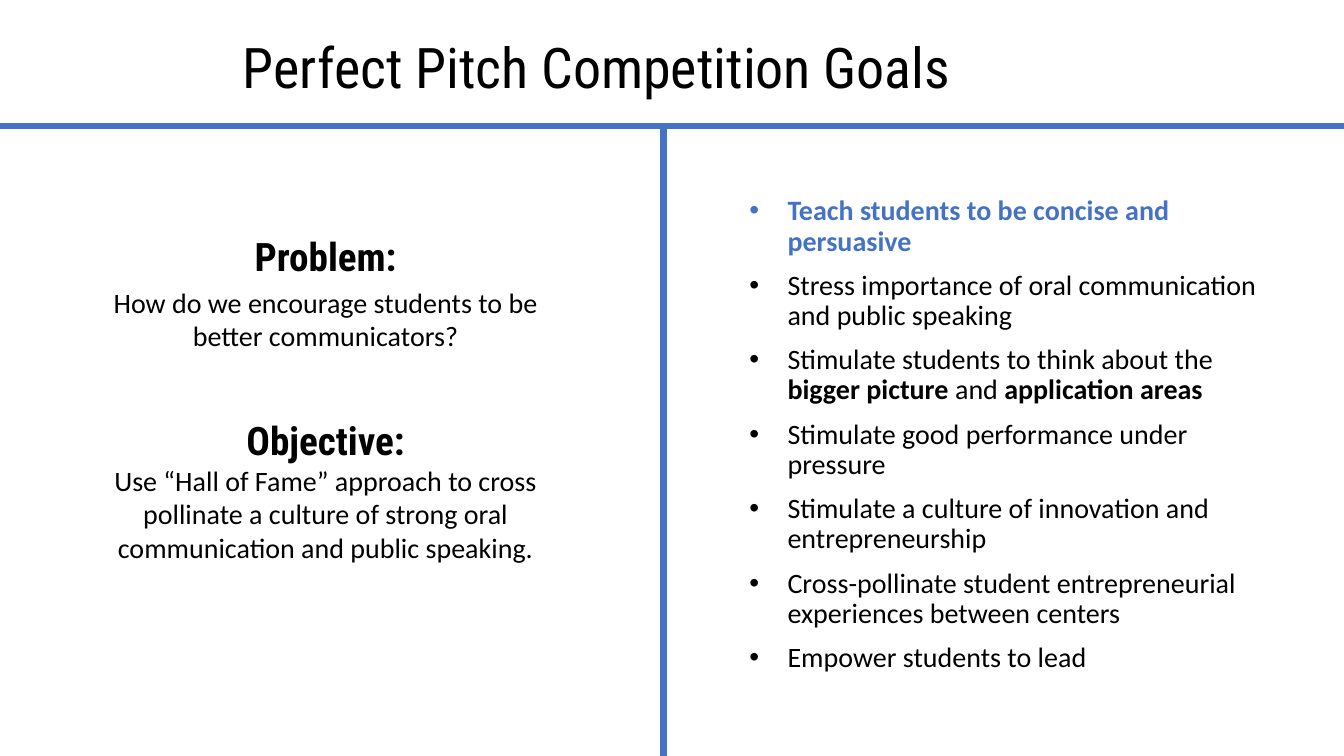
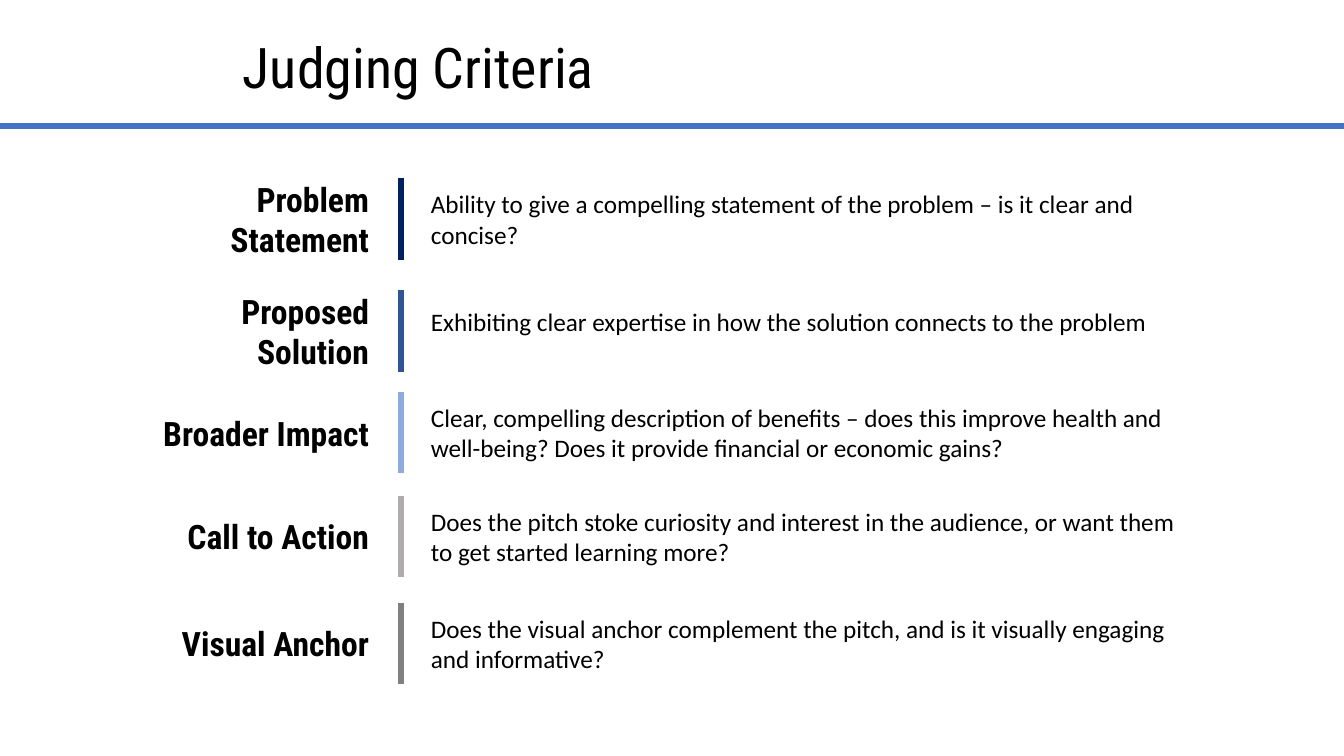
from collections import namedtuple

from lxml import etree
from pptx import Presentation
from pptx.dml.color import RGBColor
from pptx.enum.shapes import MSO_CONNECTOR
from pptx.enum.text import MSO_ANCHOR, MSO_AUTO_SIZE, PP_ALIGN
from pptx.oxml.ns import qn
from pptx.util import Inches, Pt

STRAIGHT = MSO_CONNECTOR.STRAIGHT
TOP, MIDDLE = MSO_ANCHOR.TOP, MSO_ANCHOR.MIDDLE
LEFT, CENTER, RIGHT = PP_ALIGN.LEFT, PP_ALIGN.CENTER, PP_ALIGN.RIGHT
NO_FIT = MSO_AUTO_SIZE.NONE

SLIDE_WIDTH, SLIDE_HEIGHT = Inches(13.333), Inches(7.5)
COLUMNS, ROWS = 40, 24
COLUMN, ROW = SLIDE_WIDTH / COLUMNS, SLIDE_HEIGHT / ROWS

HEADING_FONT, BODY_FONT = "Roboto Condensed", "Calibri"
COLORS = {
    "text": "000000",
    "accent": "4472C4",
    "navy": "002060",
    "blue": "2F5597",
    "light_blue": "8FAADC",
    "silver": "AFABAB",
    "gray": "808080",
}
LINE_WIDTH = Pt(4.5)
HEADER_ROW = 4
DIVIDER_COLUMN = 19.75

Box = namedtuple("Box", "left top width height")
TITLE_BOX = Box(6.93, 0.51, 23.22, 3.17)
GOALS_BOX = Box(22, 6.08, 16.35, 15.84)
CRITERION_COLUMN, CRITERION_WIDTH, CRITERION_HEIGHT = 3.48, 32.36, 2.58
LABEL_WIDTH, BAR_OFFSET, DESCRIPTION_OFFSET = 7.8, 8.46, 9.05

SECTIONS = [
    (Box(2.79, 7.23, 13.8, 4.77), 4, "Problem:",
     "How do we encourage students to be better communicators?"),
    (Box(2.79, 13.06, 13.8, 5.06), 0, "Objective:",
     "Use “Hall of Fame” approach to cross pollinate a culture of strong oral "
     "communication and public speaking."),
]

GOALS = [
    [("Teach students to be concise and persuasive", True)],
    [("Stress importance of oral communication and public speaking", False)],
    [("Stimulate students to think about the ", False), ("bigger picture ", True),
     ("and ", False), ("application areas", True)],
    [("Stimulate good performance under pressure", False)],
    [("Stimulate a culture of innovation and entrepreneurship", False)],
    [("Cross-pollinate student entrepreneurial experiences between centers", False)],
    [("Empower students to lead", False)],
]

CRITERIA = [
    (5.66, "navy", "Problem Statement", 0,
     "Ability to give a compelling statement of the problem – is it clear and concise?"),
    (9.22, "blue", "Proposed Solution", -0.29,
     "Exhibiting clear expertise in how the solution connects to the problem"),
    (12.45, "light_blue", "Broader Impact", 0,
     "Clear, compelling description of benefits – does this improve health and "
     "well-being? Does it provide financial or economic gains?"),
    (15.74, "silver", "Call to Action", 0,
     "Does the pitch stoke curiosity and interest in the audience, or want them "
     "to get started learning more?"),
    (19.14, "gray", "Visual Anchor", 0,
     "Does the visual anchor complement the pitch, and is it visually engaging "
     "and informative?"),
]


def to_lengths(box):
    return [round(value * unit) for value, unit in zip(box, (COLUMN, ROW) * 2)]


def place(shape, box, anchor=TOP):
    shape.left, shape.top, shape.width, shape.height = to_lengths(box)
    frame = shape.text_frame
    frame.word_wrap = True
    frame.auto_size = NO_FIT
    frame.vertical_anchor = anchor
    return frame


def style(paragraph, font_name, size, bold=False, color="text", alignment=LEFT):
    paragraph.alignment = alignment
    font = paragraph.font
    font.name, font.size, font.bold = font_name, Pt(size), bold
    font.color.rgb = RGBColor.from_string(COLORS[color])


def add_text_box(slide, box, anchor=TOP):
    return place(slide.shapes.add_textbox(*to_lengths(box)), box, anchor)


def add_line(slide, box, color):
    left, top, width, height = to_lengths(box)
    line = slide.shapes.add_connector(STRAIGHT, left, top, left + width, top + height)
    line.line.color.rgb = RGBColor.from_string(COLORS[color])
    line.line.width = LINE_WIDTH
    etree.SubElement(line._element.spPr, qn("a:effectLst"))


def add_bullet(paragraph):
    properties = paragraph._p.get_or_add_pPr()
    properties.set("marL", str(Inches(0.38)))
    properties.set("indent", str(-Inches(0.38)))
    etree.SubElement(properties, qn("a:buFont")).set("typeface", "Arial")
    etree.SubElement(properties, qn("a:buChar")).set("char", "•")


def add_titled_slide(presentation, layout_index, title):
    slide = presentation.slides.add_slide(presentation.slide_layouts[layout_index])
    frame = place(slide.shapes.title, TITLE_BOX, MIDDLE)
    frame.text = title
    style(frame.paragraphs[0], HEADING_FONT, 40)
    add_line(slide, Box(0, HEADER_ROW, COLUMNS, 0), "accent")
    return slide


def add_section(slide, box, gap, heading, text):
    frame = add_text_box(slide, box)
    heading_paragraph = frame.paragraphs[0]
    heading_paragraph.text = heading
    heading_paragraph._p.get_or_add_pPr().set("indent", str(-Inches(0.18)))
    style(heading_paragraph, HEADING_FONT, 28, bold=True, alignment=CENTER)
    paragraph = frame.add_paragraph()
    paragraph.text = text
    paragraph.space_before = Pt(gap)
    style(paragraph, BODY_FONT, 20, alignment=CENTER)


def fill_goals(placeholder, box):
    frame = place(placeholder, box)
    for index, goal in enumerate(GOALS):
        paragraph = frame.add_paragraph() if index else frame.paragraphs[0]
        for text, bold in goal:
            run = paragraph.add_run()
            run.text = text
            if len(goal) > 1:
                run.font.bold = bold
        paragraph.line_spacing = 0.9
        paragraph.space_before = Pt(10 if index else 0)
        add_bullet(paragraph)
        style(paragraph, BODY_FONT, 20, bold=goal[0][1],
              color="text" if index else "accent")


def add_criterion(slide, box, color, label, shift, description):
    label_frame = add_text_box(slide, box._replace(width=LABEL_WIDTH), MIDDLE)
    label_frame.text = label
    style(label_frame.paragraphs[0], HEADING_FONT, 24, bold=True, alignment=RIGHT)
    add_line(slide, Box(box.left + BAR_OFFSET, box.top, 0, box.height), color)
    description_box = Box(box.left + DESCRIPTION_OFFSET, box.top + shift,
                          box.width - DESCRIPTION_OFFSET, box.height)
    description_frame = add_text_box(slide, description_box, MIDDLE)
    description_frame.text = description
    style(description_frame.paragraphs[0], BODY_FONT, 18)


def add_goals_slide(presentation):
    slide = add_titled_slide(presentation, 1, "Perfect Pitch Competition Goals")
    add_line(slide, Box(DIVIDER_COLUMN, HEADER_ROW, 0, ROWS - HEADER_ROW), "accent")
    for section in SECTIONS:
        add_section(slide, *section)
    fill_goals(slide.placeholders[1], GOALS_BOX)


def add_criteria_slide(presentation):
    slide = add_titled_slide(presentation, 5, "Judging Criteria")
    for top, *content in CRITERIA:
        box = Box(CRITERION_COLUMN, top, CRITERION_WIDTH, CRITERION_HEIGHT)
        add_criterion(slide, box, *content)


def main():
    presentation = Presentation()
    presentation.slide_width, presentation.slide_height = SLIDE_WIDTH, SLIDE_HEIGHT
    add_goals_slide(presentation)
    add_criteria_slide(presentation)
    presentation.save("out.pptx")


if __name__ == "__main__":
    main()
